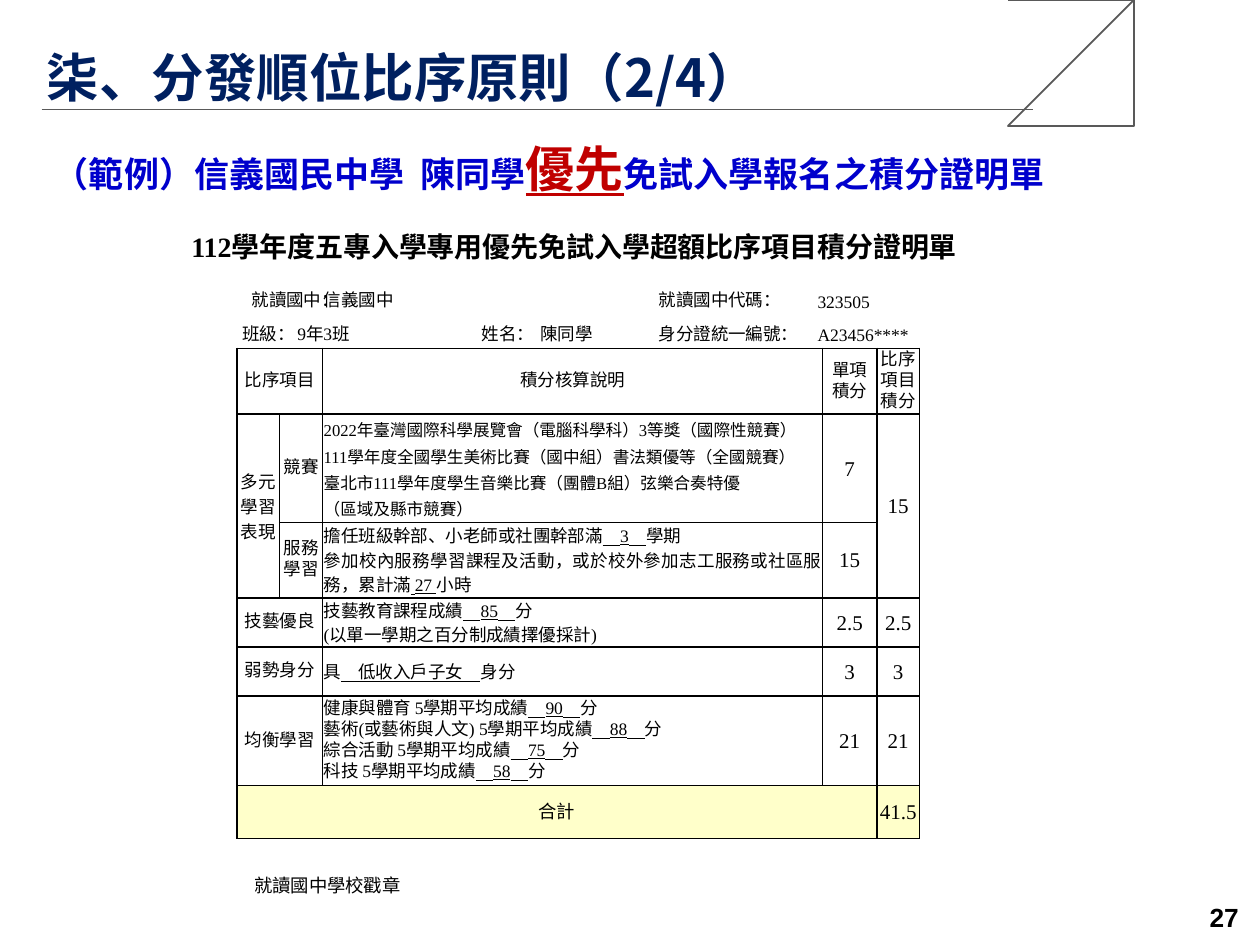
from lxml.etree import SubElement
from pptx import Presentation
from pptx.dml.color import RGBColor
from pptx.enum.shapes import MSO_CONNECTOR
from pptx.enum.text import MSO_ANCHOR as ANCHOR, MSO_AUTO_SIZE as FIT, PP_ALIGN as ALIGN
from pptx.oxml.ns import qn
from pptx.util import Inches, Pt

SANS, SERIF = "Noto Sans CJK SC", "Times New Roman"
THEME = {
    "title": {"size": 30, "bold": True, "name": SANS, "color": "002060"},
    "example": {"size": 20, "bold": True, "name": SANS, "color": "0000CC"},
    "emphasis": {"size": 28, "bold": True, "name": SANS, "color": "C00000", "underline": True},
    "heading": {"size": 16, "bold": True, "name": SERIF, "color": "000000"},
    "cell": {"size": 10, "name": SERIF, "color": "000000"},
    "award": {"size": 9.5, "name": SERIF, "color": "000000"},
    "score": {"size": 12, "name": SERIF, "color": "000000"},
    "total": {"size": 10.5, "name": SERIF, "color": "000000"},
    "stamp": {"size": 10.5, "name": SANS, "color": "000000"},
    "number": {"size": 15, "bold": True, "name": "Arial", "color": "000000"},
}
TOTAL_FILL, BORDER, PEN = "FFFFCA", "000000", "595959"

TITLE = "柒、分發順位比序原則（2/4）"
EXAMPLE = [("（範例）信義國民中學  陳同學", "example"), ("優先", "emphasis"),
           ("免試入學報名之積分證明單", "example")]
# (runs, left, top, width, height, wrap, alignment, anchor)
TEXTS = [
    (EXAMPLE, 0.33, 1.05, 8.15, 0.57, True, ALIGN.LEFT, ANCHOR.TOP),
    ([("112學年度五專入學專用優先免試入學超額比序項目積分證明單", "heading")],
     1.42, 1.77, 6.35, 0.37, False, ALIGN.LEFT, ANCHOR.TOP),
    ([("就讀國中學校戳章", "stamp")], 1.92, 6.89, 1.38, 0.28, False, ALIGN.LEFT, ANCHOR.TOP),
    ([("27", "number")], 7.68, 7.13, 2.25, 0.3, True, ALIGN.RIGHT, ANCHOR.MIDDLE),
]

COLUMNS = [0.34, 0.13, 0.21, 1.13, 0.59, 0.94, 1.26, 0.05, 0.43, 0.34]
ROWS = [0.19, 0.22, 0.52, 0.86, 0.6, 0.39, 0.39, 0.71, 0.42]
INFO_ROWS = 2
L, C, R, J = ALIGN.LEFT, ALIGN.CENTER, ALIGN.RIGHT, ALIGN.JUSTIFY
# (row, column, row span, column span, lines, style, alignment, line spacing)
# Text between a pair of bars is underlined.
CELLS = [
    (0, 0, 1, 3, ["就讀國中："], "cell", R, 12),
    (0, 3, 1, 1, ["信義國中"], "cell", L, 12),
    (0, 4, 1, 2, [""], "cell", L, 12),
    (0, 6, 1, 1, ["就讀國中代碼："], "cell", J, 12),
    (0, 7, 1, 3, ["323505"], "cell", L, 12),
    (1, 0, 1, 2, ["班級："], "cell", R, 12),
    (1, 2, 1, 2, ["9年3班"], "cell", L, 12),
    (1, 4, 1, 1, ["姓名： "], "cell", R, 12),
    (1, 5, 1, 1, ["陳同學"], "cell", J, 12),
    (1, 6, 1, 1, ["身分證統一編號："], "cell", J, 12),
    (1, 7, 1, 3, ["A23456****"], "cell", L, 12),
    (2, 0, 1, 3, ["比序項目"], "cell", C, 12),
    (2, 3, 1, 5, ["積分核算說明"], "cell", C, 12),
    (2, 8, 1, 1, ["單項", "積分"], "cell", C, 12),
    (2, 9, 1, 1, ["比序項目積分"], "cell", C, 12),
    (3, 0, 2, 1, ["多元學習表現"], "cell", C, None),
    (3, 1, 1, 2, ["競賽"], "cell", C, 12),
    (3, 3, 1, 5, ["2022年臺灣國際科學展覽會（電腦科學科）3等獎（國際性競賽）",
                  "111學年度全國學生美術比賽（國中組）書法類優等（全國競賽）",
                  "臺北市111學年度學生音樂比賽（團體B組）弦樂合奏特優",
                  "（區域及縣市競賽）"], "award", J, 15),
    (3, 8, 1, 1, ["7"], "score", C, 15),
    (3, 9, 2, 1, ["15"], "score", C, 14),
    (4, 1, 1, 2, ["服務", "學習"], "cell", C, 12),
    (4, 3, 1, 5, ["擔任班級幹部、小老師或社團幹部滿|　3　|學期",
                  "參加校內服務學習課程及活動，或於校外參加志工服務或社區服務，累計滿| 27 |小時"],
     "cell", J, 14),
    (4, 8, 1, 1, ["15"], "score", C, 14),
    (5, 0, 1, 3, ["技藝優良"], "cell", C, 12),
    (5, 3, 1, 5, ["技藝教育課程成績|　85　|分", "(以單一學期之百分制成績擇優採計)"],
     "cell", J, 14),
    (5, 8, 1, 1, ["2.5"], "score", C, 14),
    (5, 9, 1, 1, ["2.5"], "score", C, 14),
    (6, 0, 1, 3, ["弱勢身分"], "cell", C, 12),
    (6, 3, 1, 5, ["具|　低收入戶子女　|身分"], "cell", J, 14),
    (6, 8, 1, 1, ["3"], "score", C, 14),
    (6, 9, 1, 1, ["3"], "score", C, 14),
    (7, 0, 1, 3, ["均衡學習"], "cell", C, 12),
    (7, 3, 1, 5, ["健康與體育 5學期平均成績|　90　|分",
                  "藝術(或藝術與人文) 5學期平均成績|　88　|分",
                  "綜合活動 5學期平均成績|　75　|分",
                  "科技 5學期平均成績|　58　|分"], "cell", L, 12),
    (7, 8, 1, 1, ["21"], "score", C, 14),
    (7, 9, 1, 1, ["21"], "score", C, 14),
    (8, 0, 1, 9, ["合計"], "total", C, 14),
    (8, 9, 1, 1, ["41.5"], "score", C, 14),
]

# Each stroke is a start point followed by cubic curves (two controls, end).
PEN_BODY = [(8.7, 0.36), (8.67, 0.33), (8.54, 0.42), (8.41, 0.55),
            (8.3, 0.66), (8.23, 0.77), (8.22, 0.82), (8.25, 0.86), (8.25, 0.86), (8.25, 0.86),
            (8.3, 0.85), (8.41, 0.77), (8.51, 0.66), (8.64, 0.53), (8.73, 0.39), (8.7, 0.36)]
PEN_CLIP = [(8.69, 0.44), (8.69, 0.44), (8.65, 0.4), (8.63, 0.38),
            (8.63, 0.38), (8.57, 0.33), (8.42, 0.48)]
PEN_STROKES = [PEN_BODY, [(8.41, 0.74), (8.33, 0.66)], [(8.35, 0.63), (8.43, 0.72)],
               [(8.23, 0.84), (8.2, 0.87)], PEN_CLIP]


def add_run(paragraph, text, style, **extra):
    run = paragraph.add_run()
    run.text = text
    for attribute, value in {**THEME[style], **extra}.items():
        if attribute == "color":
            run.font.color.rgb = RGBColor.from_string(value)
        else:
            setattr(run.font, attribute, Pt(value) if attribute == "size" else value)
    SubElement(run.font._element, qn("a:ea"), typeface=SANS)


def set_borders(cell, sides):
    """Draw the named sides in black and hide the others."""
    properties = cell._tc.get_or_add_tcPr()
    for position, side in enumerate("LRTB"):
        line = properties.makeelement(qn(f"a:ln{side}"), {"w": str(Pt(1))})
        if side in sides:
            SubElement(SubElement(line, qn("a:solidFill")), qn("a:srgbClr"), val=BORDER)
        else:
            SubElement(line, qn("a:noFill"))
        properties.insert(position, line)


def add_score_table(slide):
    table = slide.shapes.add_table(len(ROWS), len(COLUMNS), Inches(1.88), Inches(2.24),
                                   Inches(sum(COLUMNS)), Inches(sum(ROWS))).table
    table.first_row = table.horz_banding = False
    for column, width in zip(table.columns, COLUMNS):
        column.width = Inches(width)
    for row, height in zip(table.rows, ROWS):
        row.height = Inches(height)
    for r in range(len(ROWS)):
        for c in range(len(COLUMNS)):
            cell = table.cell(r, c)
            cell.margin_left = cell.margin_right = Inches(0.01)
            cell.margin_top = cell.margin_bottom = 0
            cell.vertical_anchor = ANCHOR.MIDDLE
            if r == len(ROWS) - 1:
                cell.fill.solid()
                cell.fill.fore_color.rgb = RGBColor.from_string(TOTAL_FILL)
            else:
                cell.fill.background()
            set_borders(cell, "LRTB" if r >= INFO_ROWS else "B" if r == INFO_ROWS - 1 else "")
    for r, c, row_span, column_span, lines, style, align, spacing in CELLS:
        cell = table.cell(r, c)
        if row_span * column_span > 1:
            cell.merge(table.cell(r + row_span - 1, c + column_span - 1))
        for i, line in enumerate(lines):
            paragraph = cell.text_frame.add_paragraph() if i else cell.text_frame.paragraphs[0]
            paragraph.alignment = align
            paragraph.line_spacing = Pt(spacing) if spacing else None
            for part, text in enumerate(line.split("|")):
                if text:
                    add_run(paragraph, text, style, underline=part % 2 == 1)


def curve_points(stroke, steps=8):
    for i in range(0, len(stroke) - 3, 3):
        for t in (step / steps for step in range(1, steps + 1)):
            weights = ((1 - t) ** 3, 3 * t * (1 - t) ** 2, 3 * t * t * (1 - t), t ** 3)
            yield tuple(sum(w * p[axis] for w, p in zip(weights, stroke[i:i + 4]))
                        for axis in (0, 1))


def add_pen(slide):
    builder = slide.shapes.build_freeform(*PEN_BODY[0], scale=Inches(1))
    for stroke in PEN_STROKES:
        if stroke is not PEN_BODY:
            builder.move_to(*stroke[0])
        points = stroke[1:] if len(stroke) == 2 else curve_points(stroke)
        builder.add_line_segments(list(points), close=stroke is PEN_BODY)
    pen = builder.convert_to_shape()
    pen.shadow.inherit = False
    pen.fill.background()
    pen.line.color.rgb = RGBColor.from_string(PEN)
    pen.line.width = Pt(1)


def main():
    deck = Presentation()
    deck.slide_width, deck.slide_height = Inches(10), Inches(7.5)
    slide = deck.slides.add_slide(deck.slide_layouts[5])

    title = slide.shapes.title
    title.left, title.top, title.width, title.height = map(Inches, (0.27, 0.4, 7.89, 0.48))
    title.text_frame.vertical_anchor = ANCHOR.MIDDLE
    title.text_frame.auto_size = FIT.NONE
    heading = title.text_frame.paragraphs[0]
    heading.alignment, heading.line_spacing = ALIGN.LEFT, 0.9
    add_run(heading, TITLE, "title")

    rule = slide.shapes.add_connector(MSO_CONNECTOR.STRAIGHT, *map(Inches, (0.33, 0.87, 8.2, 0.87)))
    rule.line.color.rgb, rule.line.width = RGBColor.from_string(PEN), Pt(0.5)
    SubElement(rule._element.spPr, qn("a:effectLst"))
    add_pen(slide)

    add_score_table(slide)
    for runs, left, top, width, height, wrap, align, anchor in TEXTS:
        frame = slide.shapes.add_textbox(*map(Inches, (left, top, width, height))).text_frame
        frame.word_wrap, frame.vertical_anchor = wrap, anchor
        frame.paragraphs[0].alignment = align
        for text, style in runs:
            add_run(frame.paragraphs[0], text, style)
    deck.save("out.pptx")


if __name__ == "__main__":
    main()
